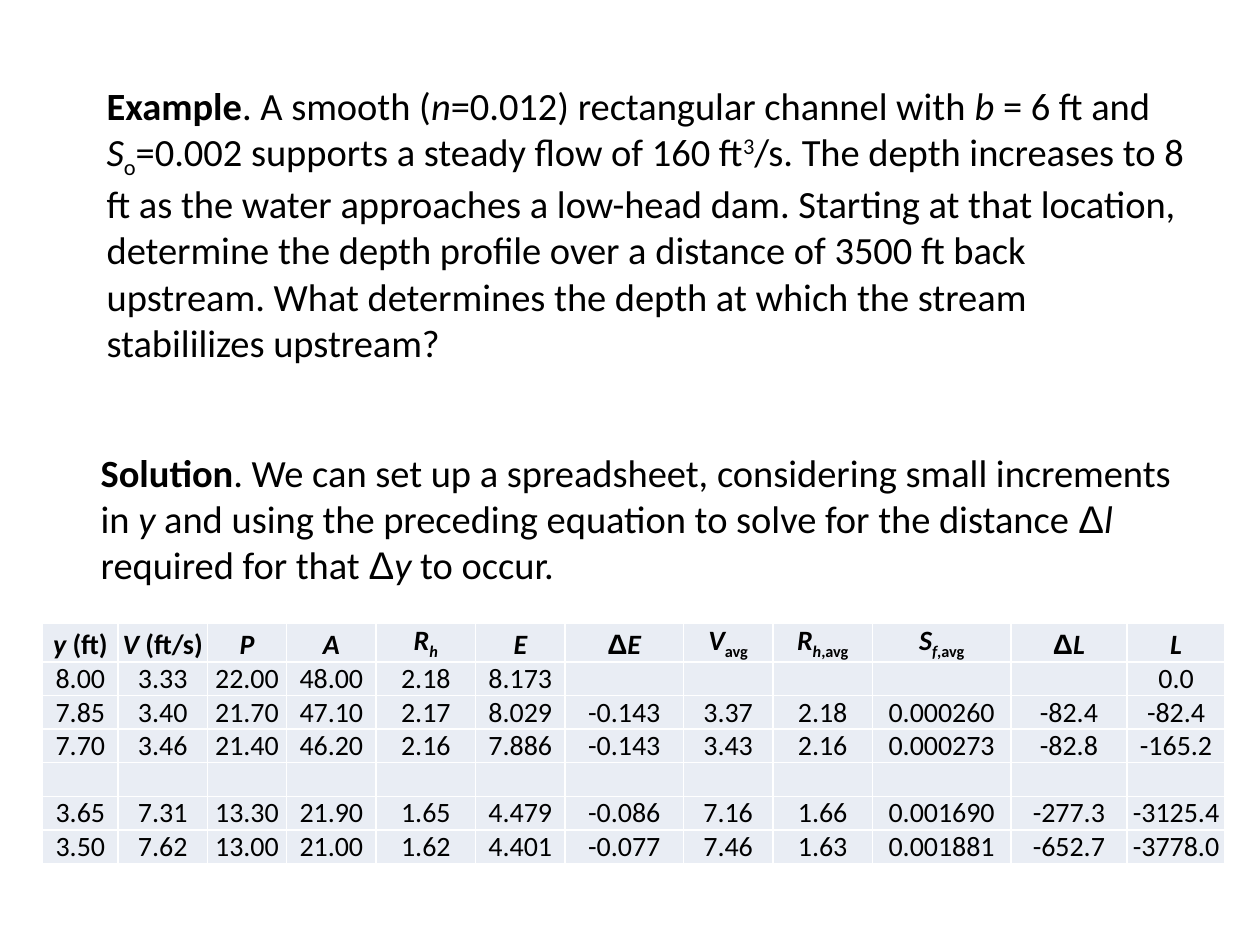
from lxml.etree import SubElement as Sub
from pptx import Presentation
from pptx.dml.color import RGBColor
from pptx.enum.text import MSO_ANCHOR as Anchor, PP_ALIGN as Align
from pptx.oxml.ns import qn
from pptx.util import Cm, Pt


def paint(fill, tone):
    fill.solid()
    fill.fore_color.rgb = RGBColor.from_string(tone)


def write(para, parts, size):
    for text, marks in parts:
        run = para.add_run()
        run.text = text
        font = run.font
        font.size = Pt(size)
        font.name = "Arial" if text == "Δ" else "Calibri"
        font.bold = "b" in marks
        font.italic = "i" in marks
        paint(font.fill, "000000")
        for mark, shift in (("_", "-25000"), ("^", "30000")):
            if mark in marks:
                run._r.get_or_add_rPr().set("baseline", shift)


deck = Presentation()
deck.slide_width, deck.slide_height = Cm(25.4), Cm(19.05)
slide = deck.slides.add_slide(deck.slide_layouts[6])

task = [
    ("Example", "b"), (". A smooth (", ""), ("n", "i"),
    ("=0.012) rectangular channel with ", ""), ("b", "i"),
    (" = 6 ft and ", ""), ("S", "i"), ("o", "_"),
    ("=0.002 supports a steady flow of 160 ft", ""), ("3", "^"),
    ("/s. The depth increases to 8 ft as the water approaches a low-head dam. "
     "Starting at that location, determine the depth profile over a distance "
     "of 3500 ft back upstream. What determines the depth at which the stream "
     "stabililizes upstream?", ""),
]
answer = [
    ("Solution", "b"),
    (". We can set up a spreadsheet, considering small increments in ", ""),
    ("y", "i"),
    (" and using the preceding equation to solve for the distance ", ""),
    ("Δ", ""), ("l", "i"), (" required for that ", ""),
    ("Δ", ""), ("y", "i"), (" to occur.", ""),
]
for left, top, high, parts in ((1.9, 1.52, 4.29, task), (1.78, 8.92, 3.61, answer)):
    box = slide.shapes.add_textbox(Cm(left), Cm(top), Cm(22.33), Cm(high))
    box.text_frame.word_wrap = True
    para = box.text_frame.paragraphs[0]
    write(para, parts, 22)
    para.space_before, para.space_after = Pt(0), Pt(12)
    gap = para._p.pPr.find(qn("a:spcBef"))
    gap.remove(gap[0])
    Sub(gap, qn("a:spcPct"), val="20000")

heads = [
    [("y", "bi"), (" (ft)", "b")],
    [("V", "bi"), (" (ft/s)", "b")],
    [("P", "bi")],
    [("A", "bi")],
    [("R", "bi"), ("h", "bi_")],
    [("E", "bi")],
    [("Δ", "b"), ("E", "bi")],
    [("V", "bi"), ("avg", "b_")],
    [("R", "bi"), ("h", "bi_"), (",avg", "b_")],
    [("S", "bi"), ("f", "bi_"), (",avg", "b_")],
    [("Δ", "b"), ("L", "bi")],
    [("L", "bi")],
]
data = [
    ["8.00", "3.33", "22.00", "48.00", "2.18", "8.173"] + [""] * 5 + ["0.0"],
    ["7.85", "3.40", "21.70", "47.10", "2.17", "8.029",
     "-0.143", "3.37", "2.18", "0.000260", "-82.4", "-82.4"],
    ["7.70", "3.46", "21.40", "46.20", "2.16", "7.886",
     "-0.143", "3.43", "2.16", "0.000273", "-82.8", "-165.2"],
    [""] * 12,
    ["3.65", "7.31", "13.30", "21.90", "1.65", "4.479",
     "-0.086", "7.16", "1.66", "0.001690", "-277.3", "-3125.4"],
    ["3.50", "7.62", "13.00", "21.00", "1.62", "4.401",
     "-0.077", "7.46", "1.63", "0.001881", "-652.7", "-3778.0"],
]
rows = [heads] + [[[(text, "")] if text else [] for text in line] for line in data]
wide = [1.52, 1.8, 1.6, 1.8, 2.01, 1.8, 2.39, 1.8, 2.01, 2.79, 2.34, 1.98]

frame = slide.shapes.add_table(len(rows), len(wide), Cm(0.86), Cm(12.57),
                               Cm(sum(wide)), Cm(4.75))
grid = frame.table
grid.first_row = grid.horz_banding = False
for col, width in zip(grid.columns, wide):
    col.width = Cm(width)
for row, line in zip(grid.rows, rows):
    row.height = Cm(0.53)
    for cell, parts in zip(row.cells, line):
        cell.margin_left = cell.margin_right = Cm(0)
        cell.margin_top = cell.margin_bottom = Cm(0)
        cell.vertical_anchor = Anchor.BOTTOM
        for side in ("lnL", "lnR", "lnT", "lnB"):
            edge = Sub(cell._tc.tcPr, qn("a:" + side), w=str(Pt(1)))
            Sub(Sub(edge, qn("a:solidFill")), qn("a:srgbClr"), val="FFFFFF")
        paint(cell.fill, "E9EDF4")
        para = cell.text_frame.paragraphs[0]
        para.alignment = Align.CENTER
        write(para, parts, 16)
        if not parts:
            Sub(para._p, qn("a:endParaRPr"), sz="1600")
frame.height = Cm(4.75)

deck.save("out.pptx")
